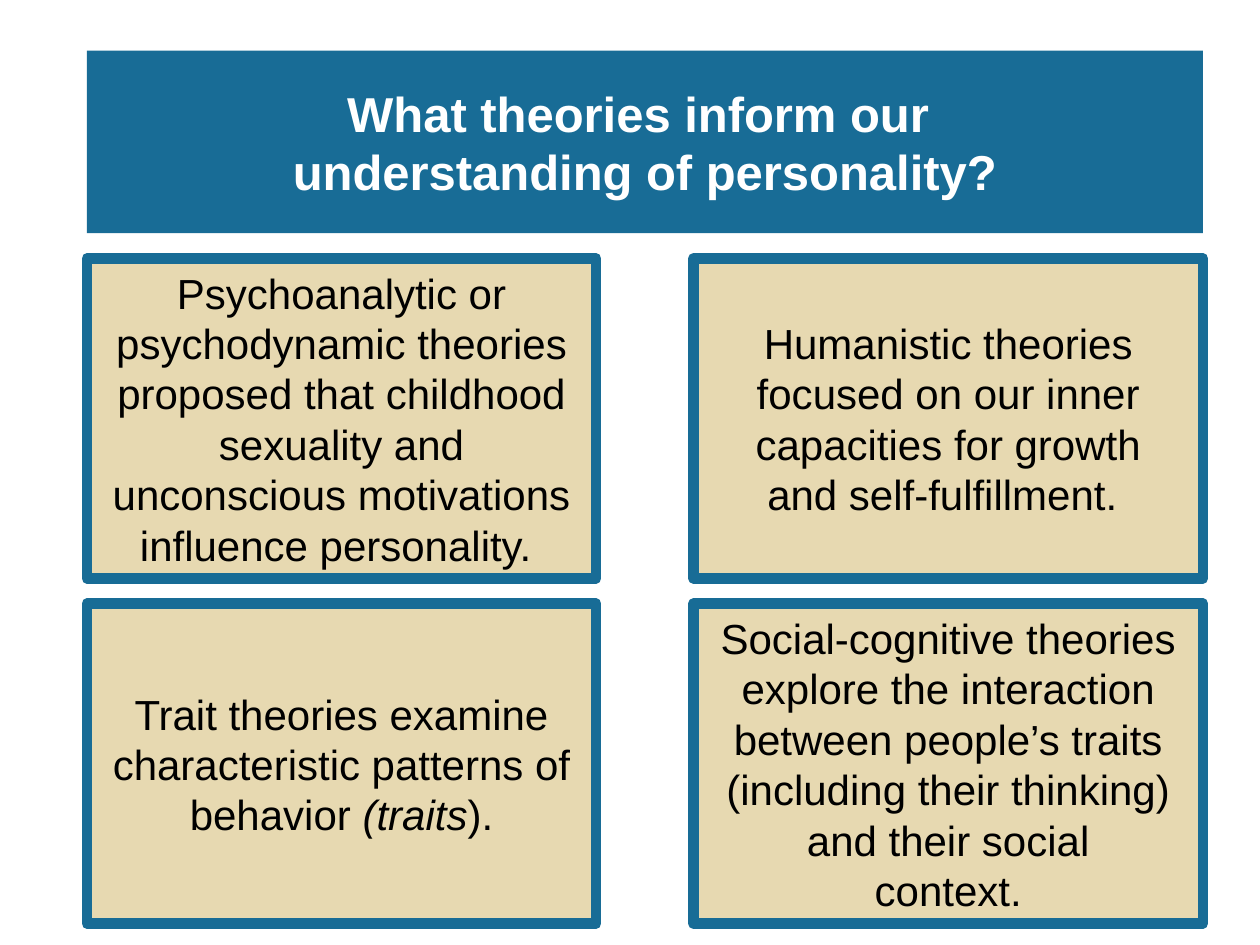
from dataclasses import dataclass

from pptx import Presentation
from pptx import util as u
from pptx.dml.color import RGBColor
from pptx.enum import shapes, text


@dataclass(frozen=True)
class Theme:
    blue: RGBColor = RGBColor(0x18, 0x6C, 0x96)
    sand: RGBColor = RGBColor(0xE7, 0xD9, 0xB1)
    white: RGBColor = RGBColor(0xFF, 0xFF, 0xFF)
    black: RGBColor = RGBColor(0, 0, 0)
    font: str = "Arial"
    head: int = 28
    body: int = 24
    edge: int = 6


theme = Theme()
deck = Presentation()
deck.slide_width, deck.slide_height = u.Cm(25.4), u.Cm(19.05)
slide = deck.slides.add_slide(deck.slide_layouts[6])


def add_box(left, top, width, height, fill, color, size, bold, paras):
    box = slide.shapes.add_shape(
        shapes.MSO_SHAPE.RECTANGLE, u.Cm(left), u.Cm(top), u.Cm(width), u.Cm(height)
    )
    box.shadow.inherit = False
    box.fill.solid()
    box.fill.fore_color.rgb = fill
    box.line.fill.background()
    frame = box.text_frame
    frame.word_wrap = True
    frame.vertical_anchor = text.MSO_ANCHOR.MIDDLE
    for index, parts in enumerate(paras):
        para = frame.paragraphs[0] if index == 0 else frame.add_paragraph()
        para.alignment = text.PP_ALIGN.CENTER
        para.font.name = theme.font
        para.font.size = u.Pt(size)
        para.font.bold = bold
        para.font.color.rgb = color
        for spot, words in enumerate(parts):
            run = para.add_run()
            run.text = words
            if spot % 2:
                run.font.italic = True
    return box


left, right = 1.75, 24.25
wide, high = 10.27, 6.45
cols = (left, right - wide)
rows = (5.21, 12.17)

title = add_box(left, 1.02, right - left, 3.68, theme.blue, theme.white, theme.head, True, [])
para = title.text_frame.paragraphs[0]
para.text = "What theories inform our \vunderstanding of personality?"
para.alignment = text.PP_ALIGN.CENTER
para.font.name = theme.font
para.font.size = u.Pt(theme.head)
para.font.bold = True
para.font.color.rgb = theme.white

cards = [
    [["Psychoanalytic or psychodynamic theories proposed that childhood sexuality "
      "and unconscious motivations influence personality. "]],
    [["Humanistic theories focused on our inner capacities for growth"],
     ["and self-fulfillment. "]],
    [["Trait theories examine characteristic patterns of"],
     ["behavior ", "(traits", ")."]],
    [["Social-cognitive theories explore the interaction"],
     ["between people’s traits (including their thinking) and their social"],
     ["context."]],
]
for index, paras in enumerate(cards):
    row, col = divmod(index, 2)
    card = add_box(cols[col], rows[row], wide, high, theme.sand, theme.black,
                   theme.body, False, paras)
    card.line.color.rgb = theme.blue
    card.line.width = u.Pt(theme.edge)

deck.save("out.pptx")
